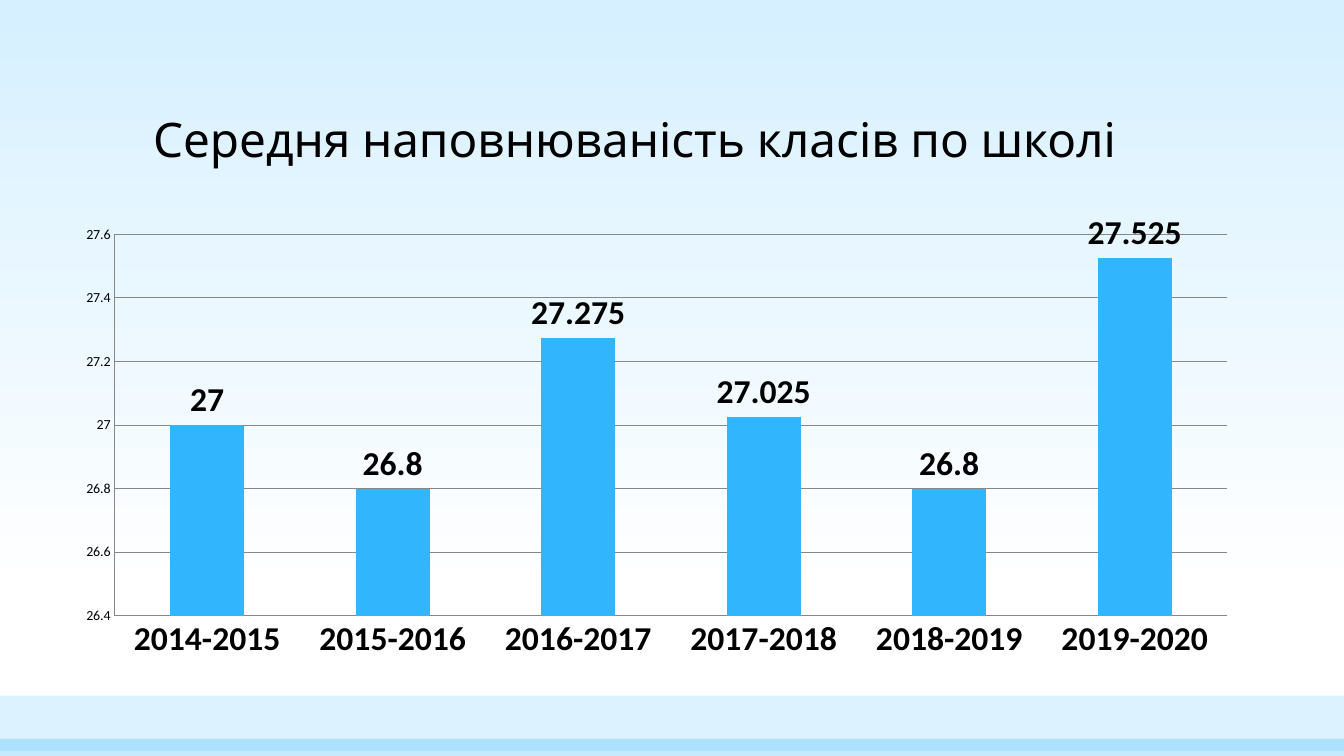
from lxml.etree import SubElement
from pptx import Presentation
from pptx.chart.data import CategoryChartData
from pptx.dml.color import RGBColor
from pptx.enum.chart import XL_CHART_TYPE as ChartType
from pptx.enum.chart import XL_LABEL_POSITION as LabelPosition
from pptx.enum.chart import XL_TICK_MARK as TickMark
from pptx.enum.shapes import MSO_SHAPE as Shape
from pptx.enum.text import MSO_ANCHOR as Anchor
from pptx.oxml.ns import qn
from pptx.util import Inches, Pt

BLUE = "31B6FD"
BLACK = "000000"
GRID = "878787"
CLASS_SIZES = {
    "2014-2015": 27,
    "2015-2016": 26.8,
    "2016-2017": 27.275,
    "2017-2018": 27.025,
    "2018-2019": 26.8,
    "2019-2020": 27.525,
}
SMALL = {"name": "Calibri", "size": Pt(10), "bold": False}
LARGE = {"name": "Calibri", "size": Pt(24), "bold": True}
HEADING = {"name": "League Spartan", "size": Pt(34)}


def color(code):
    """Turn a hex string into a colour."""
    return RGBColor.from_string(code)


def style(font, values):
    """Apply a dict of format values to a font, in black."""
    for name, value in values.items():
        setattr(font, name, value)
    font.color.rgb = color(BLACK)


def add_background(page):
    """Fill the page with a gradient from pale blue down to white."""
    fill = page.background.fill
    fill.gradient()
    fill.gradient_angle = 270
    for stop, (position, code) in zip(fill.gradient_stops, [(0, "D6F0FF"), (0.79, "FFFFFF")]):
        stop.position = position
        stop.color.rgb = color(code)


def add_band(page, box, opacity):
    """Draw a translucent blue band in the box."""
    band = page.shapes.add_shape(Shape.RECTANGLE, *map(Inches, box))
    band.shadow.inherit = False
    band.line.fill.background()
    band.fill.solid()
    band.fill.fore_color.rgb = color(BLUE)
    tint = band.fill._xPr.find(".//" + qn("a:srgbClr"))
    SubElement(tint, qn("a:alpha"), val=str(opacity * 1000))


def add_heading(page, box, text):
    """Write the heading at the bottom of the box."""
    frame = page.shapes.add_textbox(*map(Inches, box)).text_frame
    frame.word_wrap = True
    frame.vertical_anchor = Anchor.BOTTOM
    para = frame.paragraphs[0]
    para.line_spacing = 0.9
    span = para.add_run()
    span.text = text
    style(span.font, HEADING)


def add_size_chart(page, box):
    """Plot the average class size for each school year in the box."""
    data = CategoryChartData()
    data.categories = list(CLASS_SIZES)
    data.add_series("Series 1", list(CLASS_SIZES.values()))
    chart = page.shapes.add_chart(ChartType.COLUMN_CLUSTERED, *map(Inches, box), data).chart
    chart.has_legend = chart.has_title = False
    style(chart.font, SMALL)

    for axis, values in ((chart.category_axis, LARGE), (chart.value_axis, SMALL)):
        axis.major_tick_mark = axis.minor_tick_mark = TickMark.NONE
        axis.format.line.color.rgb = color(GRID)
        style(axis.tick_labels.font, values)
    scale = {"minimum_scale": 26.4, "maximum_scale": 27.6, "major_unit": 0.2}
    for name, value in scale.items():
        setattr(chart.value_axis, name, value)
    chart.value_axis.major_gridlines.format.line.color.rgb = color(GRID)

    plot = chart.plots[0]
    plot.gap_width = 150
    plot.vary_by_categories = False
    series = plot.series[0]
    series.format.fill.solid()
    series.format.fill.fore_color.rgb = color(BLUE)
    labels = series.data_labels
    labels.show_value = True
    labels.position = LabelPosition.OUTSIDE_END
    style(labels.font, LARGE)


def main():
    """Build and save the deck."""
    deck = Presentation()
    deck.slide_width, deck.slide_height = Inches(13.33), Inches(7.5)
    page = deck.slides.add_slide(deck.slide_layouts[6])
    add_background(page)
    add_band(page, (0, 6.9, 13.33, 0.55), 17)
    add_band(page, (0, 7.33, 13.33, 0.17), 28)
    add_heading(page, (1.42, 0.81, 10.5, 0.9), "Середня наповнюваність класів по школі")
    add_size_chart(page, (0.62, 2.12, 11.79, 4.52))
    deck.save("out.pptx")


if __name__ == "__main__":
    main()
